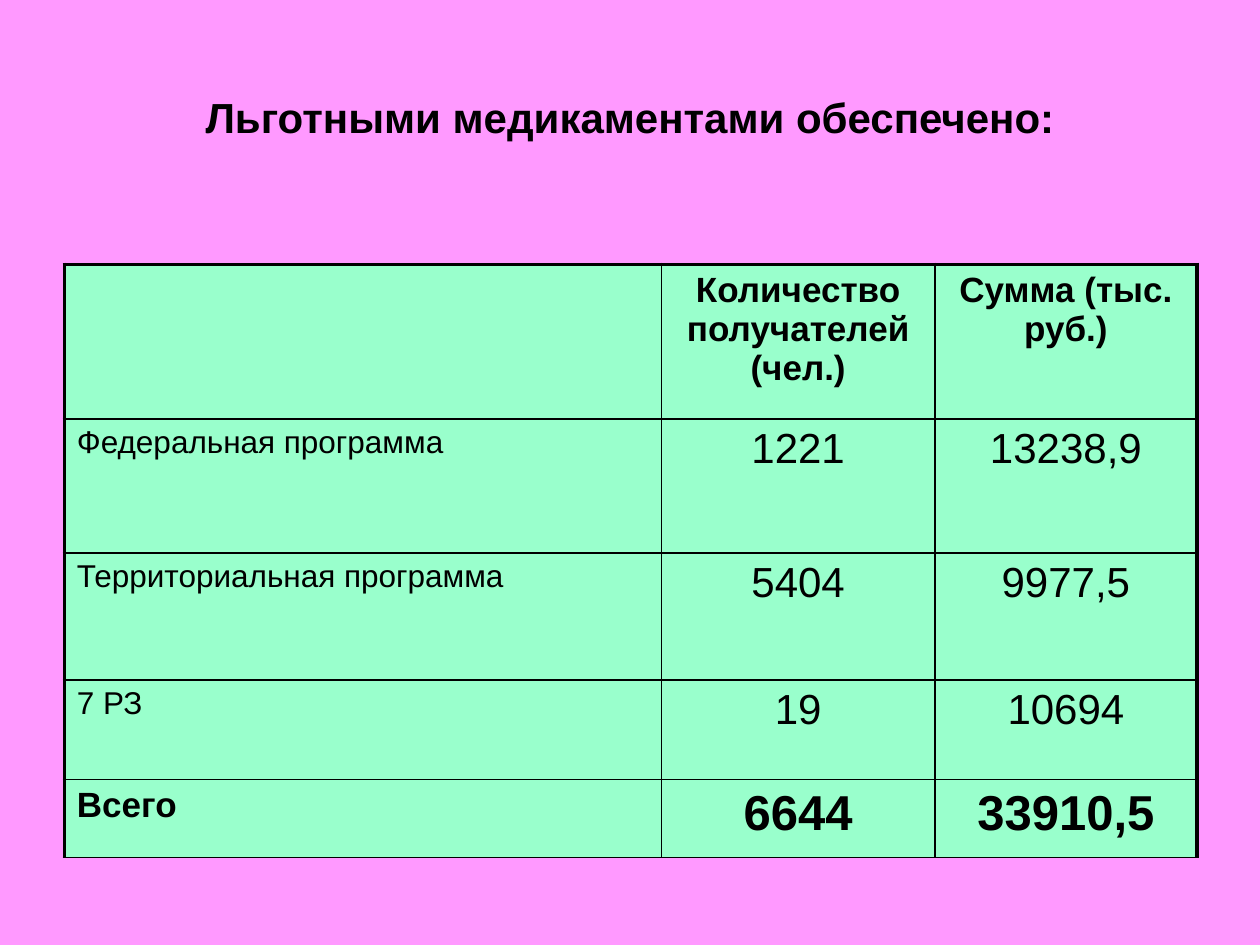
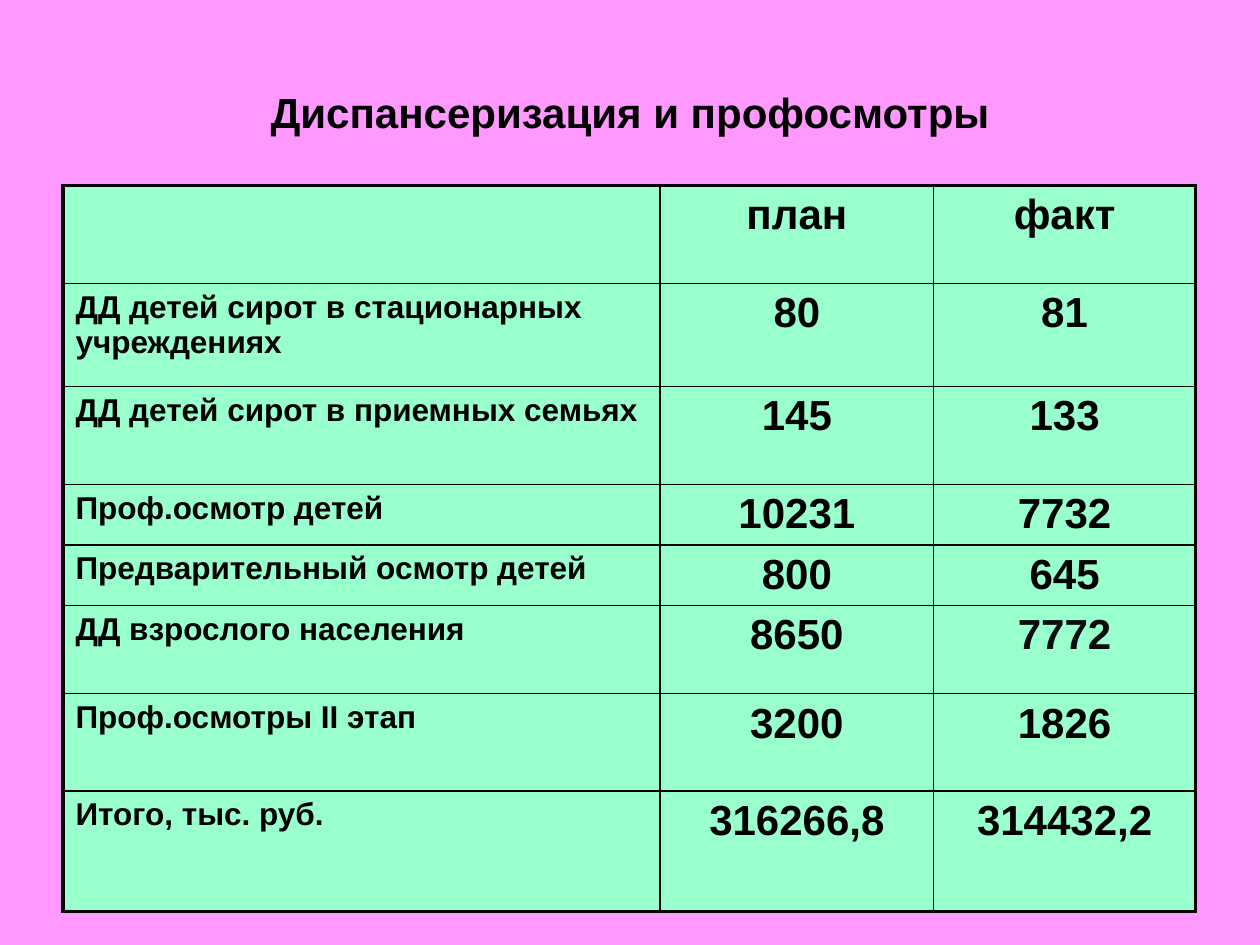
import pptx
import pptx.dml.color
import pptx.enum.text
import pptx.oxml.ns
import pptx.util
from lxml import etree

Pt = pptx.util.Pt
RGBColor = pptx.dml.color.RGBColor
ALIGN = pptx.enum.text.PP_ALIGN
ANCHOR = pptx.enum.text.MSO_ANCHOR

PINK = RGBColor(0xFF, 0x99, 0xFF)
MINT = RGBColor(0x99, 0xFF, 0xCC)
BLACK = RGBColor(0x00, 0x00, 0x00)
SOFT_BLACK = RGBColor(0x0D, 0x0D, 0x0D)

FONT = "Arial"
THIN, THICK = 1, 2.25
COLUMN_WIDTHS = (341.25, 156.25, 149.75)

MEDICINES = [
    ("", "Количество получателей (чел.)", "Сумма (тыс. руб.)"),
    ("Федеральная программа", "1221", "13238,9"),
    ("Территориальная программа", "5404", "9977,5"),
    ("7 РЗ", "19", "10694"),
    ("Всего", "6644", "33910,5"),
]
MEDICINE_HEIGHTS = (88.5, 76.5, 72.5, 57, 44.5)

CHECKUPS = [
    ("", "план", "факт"),
    ("ДД детей сирот в стационарных учреждениях", "80", "81"),
    ("ДД детей сирот в приемных семьях", "145", "133"),
    ("Проф.осмотр детей", "10231", "7732"),
    ("Предварительный осмотр детей", "800", "645"),
    ("ДД взрослого населения", "8650", "7772"),
    ("Проф.осмотры II этап", "3200", "1826"),
    ("Итого, тыс. руб.", "316266,8", "314432,2"),
]
CHECKUP_HEIGHTS = (56, 59, 56, 34.5, 34.5, 50.5, 55.5, 69)


def write(frame, text, size=24, bold=True, align=ALIGN.CENTER, colour=BLACK):
    frame.word_wrap = True
    paragraph = frame.paragraphs[0]
    paragraph.alignment = align
    paragraph.space_before = Pt(0)
    run = paragraph.add_run()
    run.text = text
    font = run.font
    font.name, font.size, font.bold = FONT, Pt(size), bold
    font.color.rgb = colour


def set_borders(cell, **widths):
    """Draw cell sides L, R, T, B (in that order) at widths in points."""
    properties = cell._tc.get_or_add_tcPr()
    qn = pptx.oxml.ns.qn
    for side, width in widths.items():
        line = etree.SubElement(properties, qn(f"a:ln{side}"), w=str(Pt(width)))
        fill = etree.SubElement(line, qn("a:solidFill"))
        etree.SubElement(fill, qn("a:srgbClr"), val=str(BLACK))


class Deck:
    def __init__(self):
        self.presentation = pptx.Presentation()
        self.presentation.slide_width = Pt(720)
        self.presentation.slide_height = Pt(540)
        self.slide = None

    def add_slide(self, title, title_height):
        title_only = self.presentation.slide_layouts[5]
        self.slide = self.presentation.slides.add_slide(title_only)
        background = self.slide.background.fill
        background.solid()
        background.fore_color.rgb = PINK
        heading = self.slide.shapes.title
        heading.left, heading.top = Pt(36), Pt(21.6)
        heading.width, heading.height = Pt(648), Pt(title_height)
        heading.text_frame.vertical_anchor = ANCHOR.MIDDLE
        write(heading.text_frame, title)

    def add_table(self, rows, left, top, heights, text_format, bottom_width):
        """Add a table; text_format(row, column) gives each cell's text options."""
        frame = self.slide.shapes.add_table(
            len(rows), len(COLUMN_WIDTHS), Pt(left), Pt(top),
            Pt(sum(COLUMN_WIDTHS)), Pt(sum(heights)))
        table = frame.table
        table.first_row = table.horz_banding = False
        for column, width in zip(table.columns, COLUMN_WIDTHS):
            column.width = Pt(width)
        last_row, last_column = len(rows) - 1, len(COLUMN_WIDTHS) - 1
        for r, (values, height) in enumerate(zip(rows, heights)):
            table.rows[r].height = Pt(height)
            for c, value in enumerate(values):
                cell = table.cell(r, c)
                set_borders(cell,
                            L=THICK if c == 0 else THIN,
                            R=THICK if c == last_column else THIN,
                            T=THICK if r == 0 else THIN,
                            B=bottom_width if r == last_row else THIN)
                cell.fill.solid()
                cell.fill.fore_color.rgb = MINT
                cell.margin_left = cell.margin_right = Pt(7.2)
                cell.margin_top = cell.margin_bottom = Pt(3.6)
                if value:
                    align = ALIGN.LEFT if c == 0 else ALIGN.CENTER
                    write(cell.text_frame, value, align=align, **text_format(r, c))


def medicine_format(row, column):
    if row == 0:
        return {"size": 20}
    if row == len(MEDICINES) - 1:
        return {"size": 20 if column == 0 else 28}
    return {"size": 18 if column == 0 else 24, "bold": False}


def checkup_format(row, column):
    adult_fact = CHECKUPS[row][column] == "7772"
    return {"size": 18 if column == 0 else 24,
            "colour": SOFT_BLACK if adult_fact else BLACK}


def main():
    deck = Deck()
    deck.add_slide("Льготными медикаментами обеспечено:", 90)
    deck.add_table(MEDICINES, 36.75, 151, MEDICINE_HEIGHTS, medicine_format, THIN)
    deck.add_slide("Диспансеризация и профосмотры", 84.25)
    deck.add_table(CHECKUPS, 36, 106, CHECKUP_HEIGHTS, checkup_format, THICK)
    deck.presentation.save("out.pptx")


if __name__ == "__main__":
    main()
